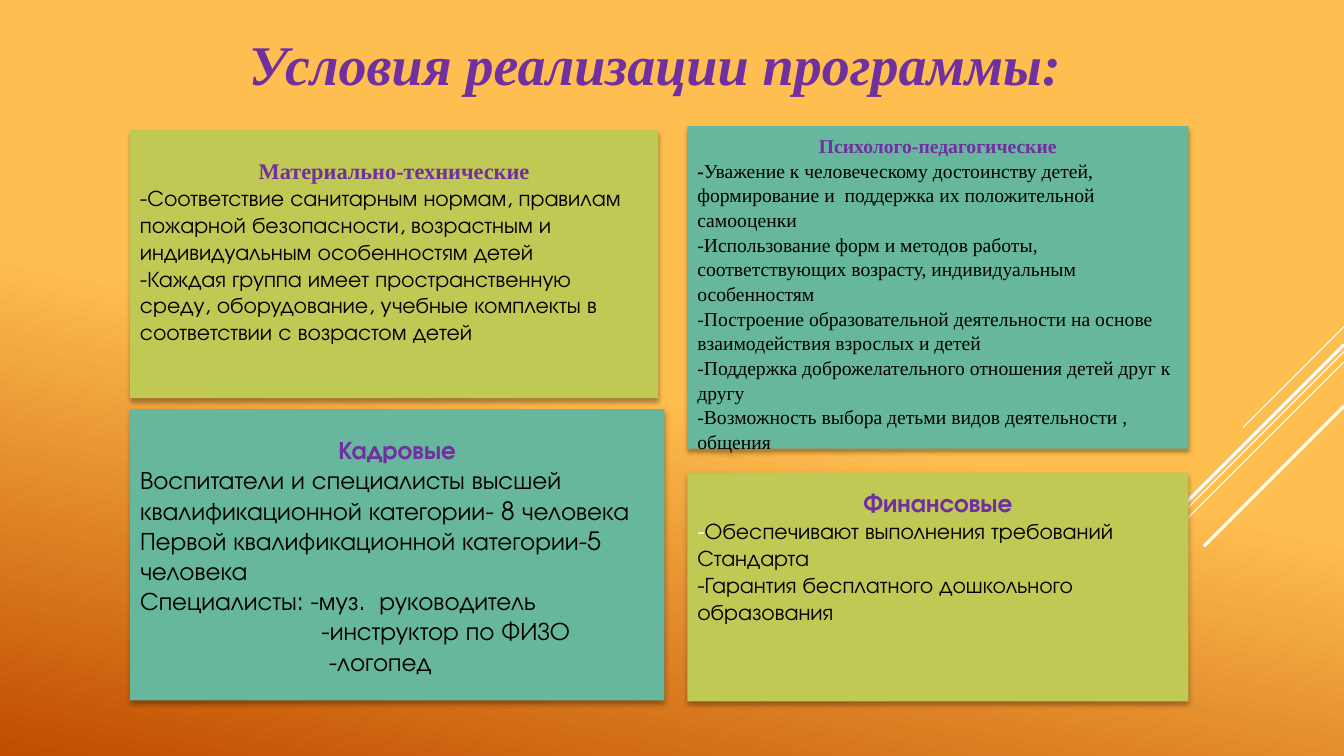
from lxml.etree import SubElement
from pptx import Presentation
from pptx.dml.color import RGBColor
from pptx.enum.shapes import MSO_CONNECTOR, MSO_SHAPE
from pptx.enum.text import MSO_ANCHOR, PP_ALIGN
from pptx.oxml.ns import qn
from pptx.util import Inches, Pt

WIDE, HIGH = Inches(13.33), Inches(7.5)
HUES = {"amber": "FFBF50", "rust": "C04D00", "lime": "C1C955", "teal": "67B79E",
        "plum": "7030A0", "ink": "000000", "white": "FFFFFF"}
SERIF, SANS = "Times New Roman", "TeX Gyre Adventor"


def hue(name):
    return RGBColor.from_string(HUES[name])


def col(share):
    return round(WIDE * share / 100)


def row(share):
    return round(HIGH * share / 100)


def write(para, text, font=SANS, size=16, color="ink", bold=False, italic=False):
    run = para.add_run()
    run.text = text
    face = run.font
    face.name, face.size, face.bold, face.italic = font, Pt(size), bold, italic
    face.color.rgb = hue(color)


def shade(shape):
    glow = SubElement(shape.shadow._element.find(qn("a:effectLst")), qn("a:outerShdw"),
                      blurRad=str(Pt(3.5)), dist=str(Pt(2.2)), dir="5400000",
                      algn="ctr", rotWithShape="0")
    tint = SubElement(glow, qn("a:srgbClr"), val=HUES["ink"])
    SubElement(tint, qn("a:alpha"), val="32000")


def backdrop(slide):
    fill = slide.background.fill
    fill.gradient()
    fill.gradient_angle = 258
    for stop, place, name in zip(fill.gradient_stops, (0.51, 1), ("amber", "rust")):
        stop.position = place
        stop.color.rgb = hue(name)


def rays(slide):
    for top, run, width in ((43.2, 7.5, 0.75), (46.53, 24.45, 0.75),
                            (47.87, 15.53, 0.75), (45.6, 14.33, 2.25),
                            (53.73, 10.43, 2.25)):
        line = slide.shapes.add_connector(
            MSO_CONNECTOR.STRAIGHT, WIDE, row(top), WIDE - col(run), row(top) + col(run))
        line.line.color.rgb = hue("white")
        line.line.width = Pt(width)
        SubElement(line._element.spPr, qn("a:effectLst"))


def title(slide, box, text):
    left, top, width, height = box
    frame = slide.shapes.add_textbox(col(left), row(top), col(width), row(height)).text_frame
    frame.word_wrap = False
    write(frame.paragraphs[0], text, font=SERIF, size=40, color="plum",
          bold=True, italic=True)


def panel(slide, box, fill, inset, head, body, top_style, style, space=1):
    left, top, width, height = box
    shape = slide.shapes.add_shape(
        MSO_SHAPE.RECTANGLE, col(left), row(top), col(width), row(height))
    shape.fill.solid()
    shape.fill.fore_color.rgb = hue(fill)
    shape.line.fill.background()
    shape.shadow.inherit = False
    glow_list = shape._element.spPr
    shade(shape) if shape.shadow._element is glow_list else None
    frame = shape.text_frame
    frame.word_wrap = True
    frame.vertical_anchor = MSO_ANCHOR.TOP
    frame.margin_top = row(inset)
    para = frame.paragraphs[0]
    para.alignment = PP_ALIGN.CENTER
    para.line_spacing = space
    write(para, head, color="plum", bold=True, **top_style)
    for indent, *runs in body:
        para = frame.add_paragraph()
        para.alignment = PP_ALIGN.LEFT
        para.line_spacing = space
        para._p.get_or_add_pPr().set("marL", str(col(indent)))
        for text, extra in runs:
            write(para, text, **{**style, **extra})


def plain(*lines):
    return [(0, (line, {})) for line in lines]


def main():
    deck = Presentation()
    deck.slide_width, deck.slide_height = WIDE, HIGH
    slide = deck.slides.add_slide(deck.slide_layouts[6])
    backdrop(slide)
    rays(slide)
    panel(slide, (9.68, 17.2, 39.3, 35.47), "lime", 3.6, "Материально-технические",
          plain("-Соответствие санитарным нормам, правилам пожарной безопасности, "
                "возрастным и индивидуальным особенностям детей",
                "-Каждая группа имеет пространственную среду, оборудование, "
                "учебные комплекты в соответствии с возрастом детей"),
          {"font": SERIF}, {})
    panel(slide, (9.68, 54.13, 39.75, 38.53), "teal", 3.33, "Кадровые",
          plain("Воспитатели и специалисты высшей квалификационной категории- 8 человека",
                "Первой квалификационной категории-5 человека",
                "Специалисты: -муз.  руководитель")
          + [(13.5, ("-инструктор по ФИЗО", {})), (14.05, ("-логопед", {}))],
          {"size": 18}, {"size": 18})
    panel(slide, (51.15, 16.67, 37.28, 42.67), "teal", 0.87, "Психолого-педагогические",
          [(0, ("-", {"bold": True}),
            ("Уважение к человеческому достоинству детей, формирование и  "
             "поддержка их положительной самооценки", {}))]
          + plain("-Использование форм и методов работы, соответствующих возрасту, "
                  "индивидуальным особенностям",
                  "-Построение образовательной деятельности на основе "
                  "взаимодействия взрослых и детей",
                  "-Поддержка доброжелательного отношения детей друг к другу",
                  "-Возможность выбора детьми видов деятельности , общения"),
          {"font": SERIF, "size": 14}, {"font": SERIF, "size": 14}, 1.05)
    panel(slide, (51.15, 62.53, 37.28, 30.27), "lime", 1.87, "Финансовые",
          [(0, ("-", {"color": "white"}),
            ("Обеспечивают выполнения требований Стандарта", {}))]
          + plain("-Гарантия бесплатного дошкольного образования"),
          {"size": 18}, {})
    title(slide, (17.78, 3.2, 62.55, 10.27), "Условия реализации программы:")
    deck.save("out.pptx")


if __name__ == "__main__":
    main()
